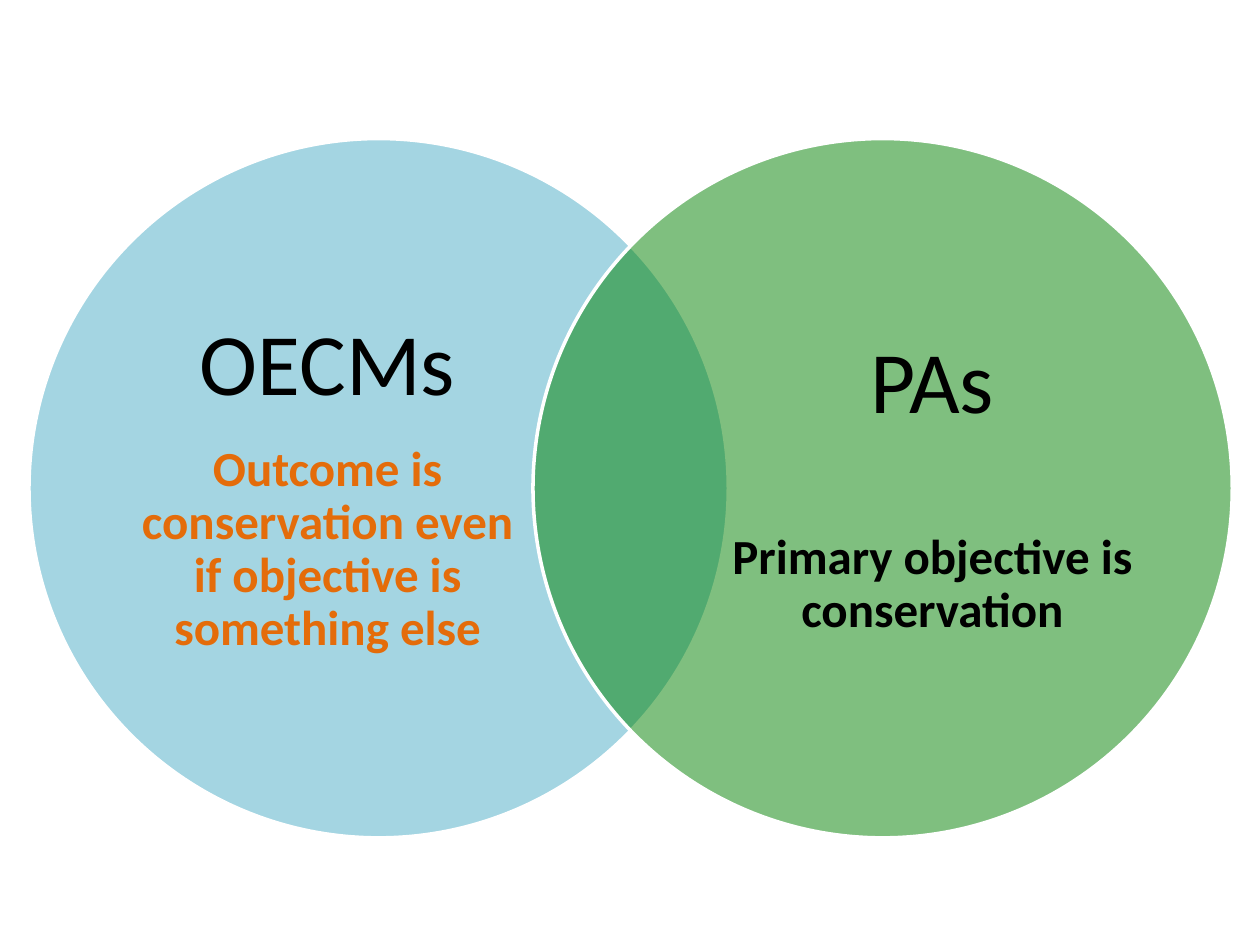
from pptx import Presentation
from pptx import util as u
from pptx.dml.color import RGBColor
from pptx.enum import shapes, text
from pptx.oxml.ns import qn
from lxml import etree

HUES = {"blue": "4BACC6", "green": "008000", "white": "FFFFFF",
        "black": "000000", "orange": "E46C0A"}


class Venn:
    """Holds the style and the group on the current slide."""

    font = "Calibri"
    top, size = 1.1, 5.55
    width, height = 3.2, 4.24

    def __init__(self, slide):
        self.group = slide.shapes.add_group_shape()

    def color(self, name):
        return RGBColor.from_string(HUES[name])

    def circle(self, left, hue):
        disc = self.group.shapes.add_shape(
            shapes.MSO_SHAPE.OVAL, u.Inches(left), u.Inches(self.top),
            u.Inches(self.size), u.Inches(self.size))
        disc.shadow.inherit = False
        disc.fill.solid()
        disc.fill.fore_color.rgb = self.color(hue)
        tint = disc._element.spPr.find(qn("a:solidFill"))[0]
        etree.SubElement(tint, qn("a:alpha")).set("val", "50000")
        disc.line.color.rgb = self.color("white")
        disc.line.width = u.Pt(2)

    def label(self, left, head, note, hue, gap):
        top = self.top + (self.size - self.height) / 2
        box = self.group.shapes.add_textbox(
            u.Inches(left), u.Inches(top),
            u.Inches(self.width), u.Inches(self.height))
        frame = box.text_frame
        frame.word_wrap = True
        frame.vertical_anchor = text.MSO_ANCHOR.MIDDLE
        frame.margin_left = frame.margin_right = 0
        frame.margin_top = frame.margin_bottom = 0
        frame.text = f"{head}\n{note}"
        looks = [(50, False, "black", gap), (28, True, hue, 0)]
        for para, (size, bold, ink, space) in zip(frame.paragraphs, looks):
            para.alignment = text.PP_ALIGN.CENTER
            para.line_spacing = 0.9
            para.space_after = u.Pt(space)
            para.font.name = self.font
            para.font.size = u.Pt(size)
            para.font.bold = bold
            para.font.color.rgb = self.color(ink)


def main():
    deck = Presentation()
    deck.slide_width, deck.slide_height = u.Inches(10), u.Inches(7.5)
    venn = Venn(deck.slides.add_slide(deck.slide_layouts[6]))
    venn.circle(0.23, "blue")
    venn.label(1, "OECMs",
               "Outcome is conservation even if objective is something else",
               "orange", 17)
    venn.circle(4.23, "green")
    venn.label(5.8, "PAs", "Primary objective is conservation", "black", 57)
    deck.save("out.pptx")


if __name__ == "__main__":
    main()
